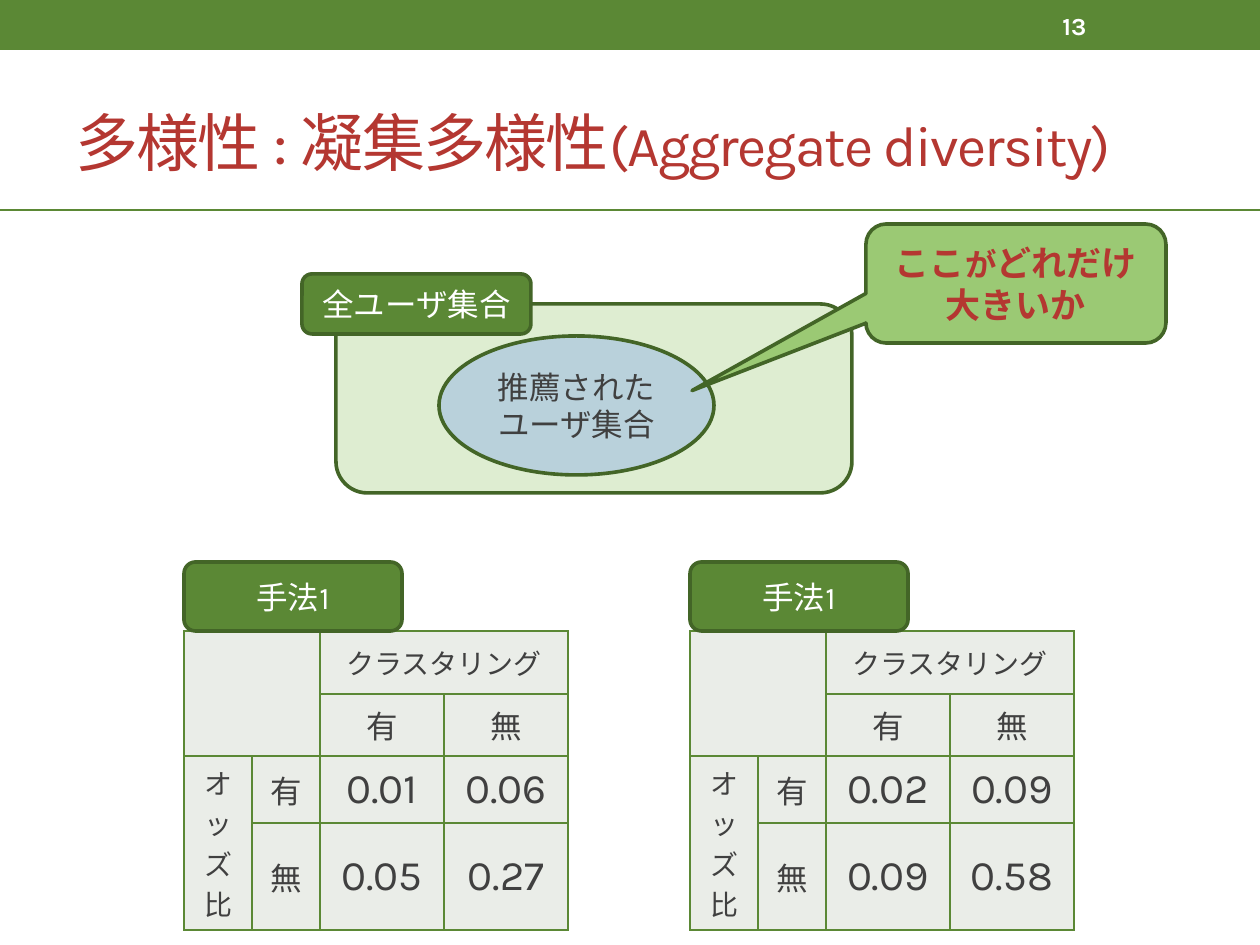
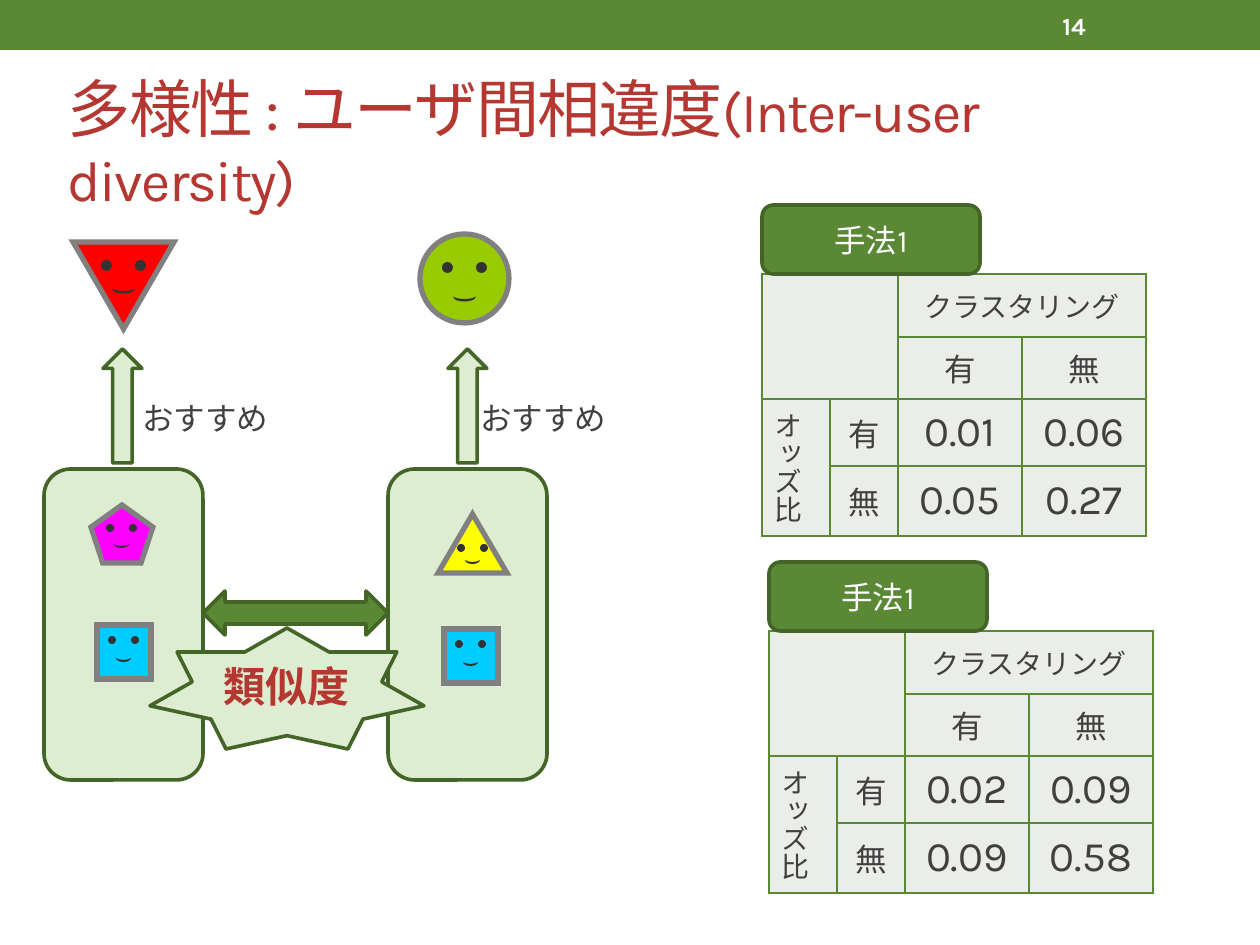
from lxml.etree import SubElement
from pptx import Presentation
from pptx.dml.color import RGBColor
from pptx.enum.shapes import MSO_CONNECTOR, MSO_SHAPE as Kind
from pptx.enum.text import MSO_ANCHOR, MSO_AUTO_SIZE, PP_ALIGN
from pptx.oxml import parse_xml
from pptx.oxml.ns import nsdecls, qn
from pptx.util import Pt

PX = 914400 / 126
INK = {
    "green": "5B8835", "dark": "436527", "pale": "DEEDD1", "leaf": "9BC974",
    "sky": "B9D1DB", "cell": "EAEDE8", "title": "B43731", "text": "404040",
    "white": "FFFFFF", "grey": "808080", "face": "333333", "red": "FF0000",
    "lime": "99CC00", "pink": "FF00FF", "cyan": "00CCFF", "yellow": "FFFF00",
}
RGB = {name: RGBColor.from_string(code) for name, code in INK.items()}


def write(frame, paras, ink="text", bold=False, align=PP_ALIGN.CENTER,
          anchor=MSO_ANCHOR.MIDDLE, wrap=True, side=None):
    """Fill a text frame; each paragraph is a list of (text, size) runs."""
    look = {"vertical_anchor": anchor, "word_wrap": wrap}
    if side is not None:
        look.update(margin_left=int(side * PX), margin_right=int(side * PX))
    for name, value in look.items():
        setattr(frame, name, value)
    for i, runs in enumerate(paras):
        para = frame.add_paragraph() if i else frame.paragraphs[0]
        para.alignment = align
        for text, size in runs:
            run = para.add_run()
            run.text = text
            for name, value in {"name": "Karla", "size": Pt(size), "bold": bold}.items():
                setattr(run.font, name, value)
            run.font.color.rgb = RGB[ink]


def draw(shapes, kind, box, fill, line="dark", width=2.08, turn=0):
    """Add a preset shape; kind None gives a text box."""
    place = [int(v * PX) for v in box]
    if kind is None:
        return shapes.add_textbox(*place)
    shape = shapes.add_shape(kind, *place)
    shape.shadow.inherit = False
    shape.rotation = turn
    shape.fill.solid()
    shape.fill.fore_color.rgb = RGB[fill]
    if line:
        shape.line.color.rgb = RGB[line]
        shape.line.width = Pt(width)
    else:
        shape.line.fill.background()
    return shape


deck = Presentation()
deck.slide_width, deck.slide_height = int(1260 * PX), int(945 * PX)

# Band, title and page number
pages = []
for num, topic, term, side in [
    (13, "多様性 : 凝集多様性", "(Aggregate diversity)", None),
    (14, "多様性 : ユーザ間相違度", "(Inter-user diversity)", 5),
]:
    page = deck.slides.add_slide(deck.slide_layouts[6]).shapes
    pages.append(page)
    draw(page, Kind.RECTANGLE, (0, 0, 1260, 50), "green", None)
    title = draw(page, None, (63, 73, 1134, 136), None).text_frame
    write(title, [[(topic, 36), (term, 32.4)]], "title", align=PP_ALIGN.LEFT, side=side)
    for run in title.paragraphs[0].runs:
        run.font._element.set("spc", "-100")
    count = draw(page, None, (1050, 3, 147, 45), None).text_frame
    write(count, [[(str(num), 14)]], "white", True, PP_ALIGN.LEFT)
whole, pair = pages

# User sets on the first slide
rule = whole.add_connector(MSO_CONNECTOR.STRAIGHT, 0, int(210 * PX), int(1260 * PX), int(210 * PX))
rule.line.color.rgb = RGB["green"]
rule.line.width = Pt(0.75)
SubElement(rule._element.spPr, qn("a:effectLst"))

draw(whole, Kind.ROUNDED_RECTANGLE, (336, 304, 516, 189), "pale")
label = draw(whole, Kind.ROUNDED_RECTANGLE, (302, 274, 229, 60), "green")
write(label.text_frame, [[("全ユーザ集合", 18)]], "white")
users = draw(whole, Kind.OVAL, (439, 336, 275, 139), "sky")
write(users.text_frame, [[("推薦された", 18)], [("ユーザ集合", 18)]])
note = draw(whole, Kind.ROUNDED_RECTANGULAR_CALLOUT, (866, 224, 300, 119), "leaf")
for i, value in enumerate([-1.08, 0.9, 0.17]):
    note.adjustments[i] = value
write(note.text_frame, [[("ここ", 20), ("が", 18), ("どれだけ", 20)], [("大きいか", 20)]],
      "title", True, side=5)

# Two users, their lists and what each is given on the second slide
for left in (388, 44):
    draw(pair, Kind.FLOWCHART_ALTERNATE_PROCESS, (left, 469, 159, 311), "pale")

GAP = {11: 34, 8: 23}
MOUTH = {11: (5, 23), 8: (4, 15)}
faces = [  # kind, box, fill, turn, line of eyes, eye size, drop to mouth
    (Kind.ISOSCELES_TRIANGLE, (73, 242, 101, 87), "red", 180, (101, 260), 11, 31),
    (Kind.OVAL, (420, 234, 89, 89), "lime", 0, (442, 262), 11, 37),
    (Kind.REGULAR_PENTAGON, (91, 505, 62, 58), "pink", 0, (106, 524), 8, 22),
    (Kind.RECTANGLE, (97, 625, 54, 54), "cyan", 0, (108, 636), 8, 24),
    (Kind.ISOSCELES_TRIANGLE, (438, 514, 69, 59), "yellow", 0, (457, 544), 8, 18),
    (Kind.RECTANGLE, (444, 629, 54, 54), "cyan", 0, (455, 640), 8, 24),
]
for kind, box, fill, turn, (x, y), eye, drop in faces:
    face = pair.add_group_shape().shapes
    head = draw(face, kind, box, fill, "grey", 3, turn)
    SubElement(head._element.spPr.find(qn("a:ln")), qn("a:miter")).set("lim", "800000")
    for step in (0, GAP[eye]):
        draw(face, Kind.OVAL, (x + step, y, eye, eye), "face", None)
    wide, high = MOUTH[eye]
    mid = x + (GAP[eye] + eye) / 2
    draw(face, Kind.MOON, (mid - wide / 2, y + drop - high / 2, wide, high), "face", None, turn=270)

for left in (103, 448):
    draw(pair, Kind.UP_ARROW, (left, 349, 39, 114), "pale")
for left in (130, 468):
    tip = draw(pair, None, (left, 393, 152, 50), None).text_frame
    tip.auto_size = MSO_AUTO_SIZE.SHAPE_TO_FIT_TEXT
    write(tip, [[("おすすめ", 18)]], align=PP_ALIGN.LEFT, anchor=MSO_ANCHOR.TOP, wrap=False)
draw(pair, Kind.LEFT_RIGHT_ARROW, (203, 591, 185, 44), "green")
star = draw(pair, Kind.STAR_7_POINT, (150, 628, 274, 121), "pale")
write(star.text_frame, [[("類似度", 24)]], "title", True)

# Result tables, each under its method tab; the last row differs by slide
COLS, ROWS = (68, 68, 124, 124), (63, 62, 67)
HEADS = {
    (0, 2): ("クラスタリング", 16), (1, 2): ("有", 18), (1, 3): ("無", 18),
    (2, 0): ("オッズ比", 16), (2, 1): ("有", 18), (3, 1): ("無", 18),
}
SPANS = [((0, 0), (1, 1)), ((0, 2), (0, 3)), ((2, 0), (3, 0))]
first = ("0.01", "0.06", "0.05", "0.27")
second = ("0.02", "0.09", "0.09", "0.58")
for page, left, top, last, data in [
    (whole, 184, 631, 107, first), (whole, 690, 631, 107, second),
    (pair, 762, 274, 70, first), (pair, 769, 631, 70, second),
]:
    highs = (*ROWS, last)
    box = [int(v * PX) for v in (left, top, sum(COLS), sum(highs))]
    table = page.add_table(4, 4, *box).table
    for name in ("first_row", "horz_banding"):
        setattr(table, name, False)
    for col, width in zip(table.columns, COLS):
        col.width = int(width * PX)
    for row, height in zip(table.rows, highs):
        row.height = int(height * PX)
    for start, end in SPANS:
        table.cell(*start).merge(table.cell(*end))
    words = dict(HEADS)
    for i, value in enumerate(data):
        words[2 + i // 2, 2 + i % 2] = (value, 24)
    for r in range(4):
        for c in range(4):
            cell = table.cell(r, c)
            cell.fill.solid()
            cell.fill.fore_color.rgb = RGB["cell"]
            cell.vertical_anchor = MSO_ANCHOR.MIDDLE
            props = cell._tc.get_or_add_tcPr()
            for i, edge in enumerate("LRTB"):
                props.insert(i, parse_xml(
                    f'<a:ln{edge} {nsdecls("a")} w="12700"><a:solidFill>'
                    f'<a:srgbClr val="{INK["green"]}"/></a:solidFill></a:ln{edge}>'))
            if (r, c) == (2, 0):
                props.set("vert", "eaVert")
            if (r, c) in words:
                para = cell.text_frame.paragraphs[0]
                para.alignment = PP_ALIGN.CENTER
                run = para.add_run()
                run.text, size = words[r, c]
                for name, value in {"name": "Karla", "size": Pt(size)}.items():
                    setattr(run.font, name, value)
                run.font.color.rgb = RGB["text"]
    tab = draw(page, Kind.ROUNDED_RECTANGLE, (left, top - 69, 218, 69), "green")
    write(tab.text_frame, [[("手法1", 18)]], "white")

deck.save("out.pptx")
